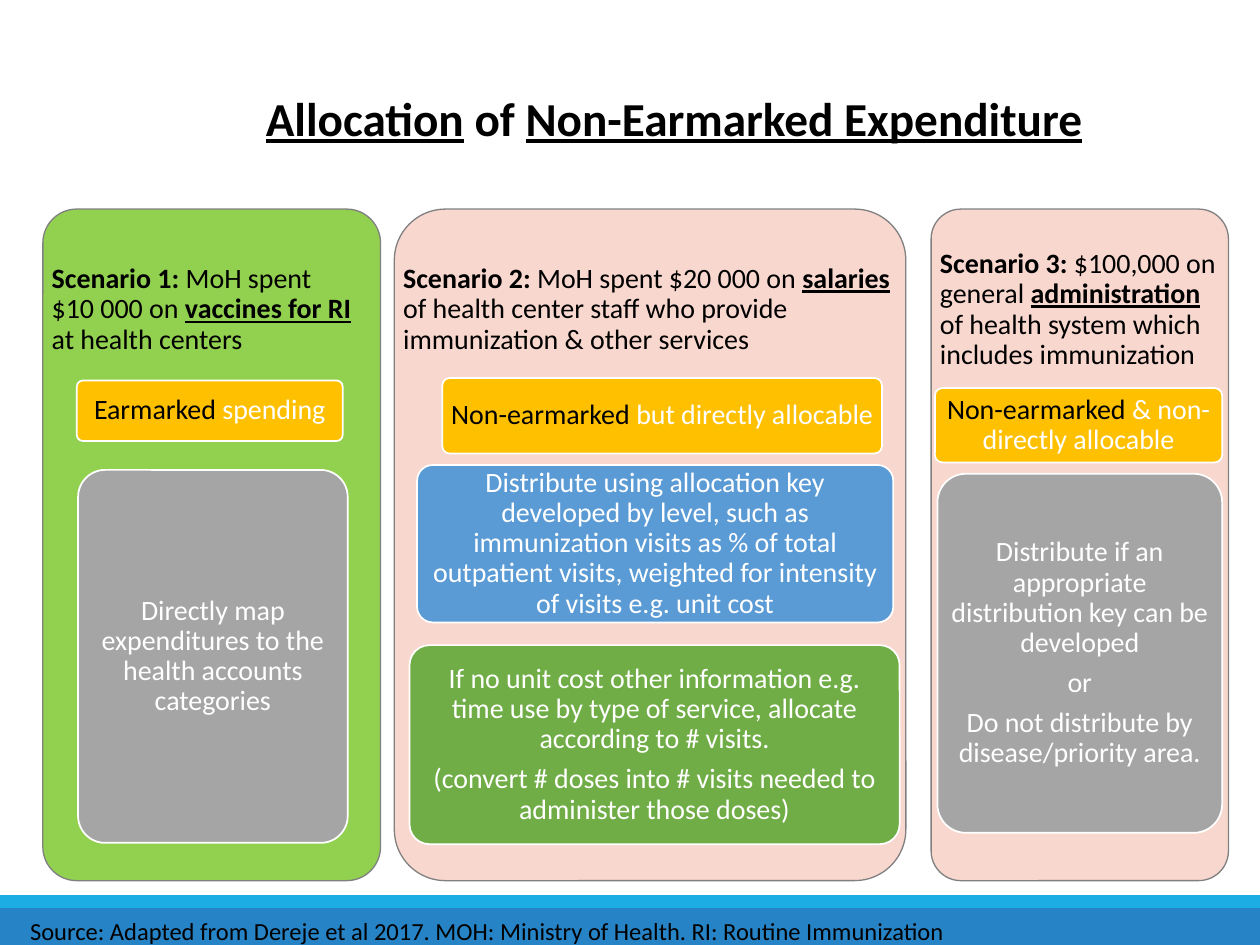
"""Build the slide on allocating non-earmarked expenditure."""
from pptx import Presentation
from pptx.dml.color import RGBColor
from pptx.enum.shapes import MSO_SHAPE
from pptx.enum.text import MSO_ANCHOR, MSO_AUTO_SIZE, PP_ALIGN
from pptx.util import Inches, Pt

RECTANGLE = MSO_SHAPE.RECTANGLE
ROUNDED = MSO_SHAPE.ROUNDED_RECTANGLE
MIDDLE = MSO_ANCHOR.MIDDLE
NO_AUTOFIT = MSO_AUTO_SIZE.NONE
LEFT, CENTER = PP_ALIGN.LEFT, PP_ALIGN.CENTER

BLACK = RGBColor(0x00, 0x00, 0x00)
WHITE = RGBColor(0xFF, 0xFF, 0xFF)
OUTLINE_GRAY = RGBColor(0x80, 0x80, 0x80)
LIME = RGBColor(0x92, 0xD0, 0x50)
PINK = RGBColor(0xF8, 0xD7, 0xCE)
AMBER = RGBColor(0xFF, 0xC0, 0x00)
GRAY = RGBColor(0xA5, 0xA5, 0xA5)
BLUE = RGBColor(0x5B, 0x9B, 0xD5)
GREEN = RGBColor(0x70, 0xAD, 0x47)
FOOTER_BLUE = RGBColor(0x26, 0x83, 0xC6)
FOOTER_CYAN = RGBColor(0x1C, 0xAD, 0xE4)

FONT = "Calibri"
PANEL_TOP, PANEL_HEIGHT, HEADING_HEIGHT = 1.66, 5.33, 1.6

# Each heading alternates bold label, plain text, bold underlined key term, plain text.
SCENARIOS = [
    {
        "left": 0.34, "width": 2.68, "fill": LIME,
        "heading": ("Scenario 1: ", "MoH spent\n$10 000 on ", "vaccines for RI",
                    " at health centers"),
        "cards": [
            ((0.61, 3.02, 2.11, 0.48), AMBER, [("Earmarked", " spending")]),
            ((0.62, 3.73, 2.14, 2.96), GRAY,
             [("", "Directly map expenditures to the health accounts categories")]),
        ],
    },
    {
        "left": 3.13, "width": 4.06, "fill": PINK,
        "heading": ("Scenario 2: ", "MoH spent $20 000 on ", "salaries",
                    " of health center staff who provide immunization & other services"),
        "cards": [
            ((3.51, 3.0, 3.49, 0.6), AMBER, [("Non-earmarked ", "but directly allocable")]),
            ((3.31, 3.69, 3.78, 1.25), BLUE,
             [("", "Distribute using allocation key developed by level, such as "
                   "immunization visits as % of total outpatient visits, weighted "
                   "for intensity of visits e.g. unit cost")]),
            ((3.25, 5.12, 3.89, 1.58), GREEN,
             [("", "If no unit cost other information e.g. time use by type of "
                   "service, allocate according to # visits."),
              ("", "(convert # doses into # visits needed to administer those doses)")]),
        ],
    },
    {
        "left": 7.39, "width": 2.36, "fill": PINK,
        "heading": ("Scenario 3: ", "$100,000 on general ", "administration",
                    " of health system which includes immunization"),
        "cards": [
            ((7.42, 3.08, 2.28, 0.59), AMBER, [("Non-earmarked ", "& non-directly allocable")]),
            ((7.44, 3.76, 2.26, 2.85), GRAY,
             [("", "Distribute if an appropriate distribution key can be developed"),
              ("", "or"),
              ("", "Do not distribute by disease/priority area.")]),
        ],
    },
]


def inches(box):
    """Convert a left, top, width, height tuple to lengths."""
    return [Inches(value) for value in box]


def add_block(slide, kind, box, fill, line, line_width):
    """Add a filled, outlined shape without shadow."""
    block = slide.shapes.add_shape(kind, *inches(box))
    block.shadow.inherit = False
    block.fill.solid()
    block.fill.fore_color.rgb = fill
    block.line.color.rgb = line
    block.line.width = Pt(line_width)
    if kind == ROUNDED:
        block.adjustments[0] = 0.1
    return block


def set_frame(frame, horizontal, vertical):
    """Wrap and vertically centre a text frame with the given insets."""
    frame.word_wrap = True
    frame.vertical_anchor = MIDDLE
    frame.margin_left = frame.margin_right = Inches(horizontal)
    frame.margin_top = frame.margin_bottom = Inches(vertical)


def format_paragraph(paragraph, size, color, alignment):
    """Set the shared font and line spacing of a paragraph."""
    paragraph.alignment = alignment
    paragraph.line_spacing = 0.9
    paragraph.font.name = FONT
    paragraph.font.size = Pt(size)
    paragraph.font.color.rgb = color


def add_run(paragraph, text, bold=None, underline=None, color=None):
    """Append text with its own emphasis, honouring line breaks."""
    for index, part in enumerate(text.split("\n")):
        if index:
            paragraph.add_line_break()
        run = paragraph.add_run()
        run.text = part
        run.font.bold = bold
        run.font.underline = underline
        if color is not None:
            run.font.color.rgb = color


def add_title(slide):
    """Fill and place the title placeholder."""
    title = slide.shapes.title
    title.left, title.top, title.width, title.height = inches((1.62, 0.49, 7.46, 0.94))
    title.text_frame.auto_size = NO_AUTOFIT
    title.text_frame.vertical_anchor = MIDDLE
    paragraph = title.text_frame.paragraphs[0]
    format_paragraph(paragraph, 27, BLACK, CENTER)
    paragraph.font.bold = True
    add_run(paragraph, "Allocation", True, True)
    add_run(paragraph, " of ", True, False)
    add_run(paragraph, "Non-Earmarked Expenditure", True, True)


def add_heading(slide, left, width, heading):
    """Add the scenario description at the top of its panel."""
    box = slide.shapes.add_textbox(*inches((left, PANEL_TOP, width, HEADING_HEIGHT)))
    set_frame(box.text_frame, 0.07, 0.07)
    paragraph = box.text_frame.paragraphs[0]
    format_paragraph(paragraph, 16, BLACK, LEFT)
    label, opening, key_term, ending = heading
    add_run(paragraph, label, bold=True)
    add_run(paragraph, opening)
    add_run(paragraph, key_term, bold=True, underline=True)
    add_run(paragraph, ending)


def add_card(slide, box, fill, lines):
    """Add a rounded card whose lines pair a black lead with white text."""
    frame = add_block(slide, ROUNDED, box, fill, WHITE, 1).text_frame
    set_frame(frame, 0.04, 0.03)
    for index, (lead, text) in enumerate(lines):
        paragraph = frame.add_paragraph() if index else frame.paragraphs[0]
        format_paragraph(paragraph, 16, WHITE, CENTER)
        paragraph.space_after = Pt(5.6)
        if lead:
            add_run(paragraph, lead, color=BLACK)
        add_run(paragraph, text)


def add_scenario(slide, scenario):
    """Add one scenario panel with its heading and cards."""
    left, width = scenario["left"], scenario["width"]
    panel = (left, PANEL_TOP, width, PANEL_HEIGHT)
    add_block(slide, ROUNDED, panel, scenario["fill"], OUTLINE_GRAY, 0.75)
    add_heading(slide, left, width, scenario["heading"])
    for box, fill, lines in scenario["cards"]:
        add_card(slide, box, fill, lines)


def add_source(slide):
    """Add the source line over the footer band."""
    source = slide.shapes.add_textbox(*inches((0.14, 7.22, 8.19, 0.34)))
    source.text_frame.word_wrap = True
    paragraph = source.text_frame.paragraphs[0]
    format_paragraph(paragraph, 14, BLACK, LEFT)
    paragraph.line_spacing = 1.0
    add_run(paragraph, "Source: Adapted from Dereje et al 2017. MOH: Ministry of Health. "
                       "RI: Routine Immunization")


def main():
    """Build and save the slide."""
    deck = Presentation()
    deck.slide_width, deck.slide_height = Inches(10), Inches(7.5)
    slide = deck.slides.add_slide(deck.slide_layouts[5])
    add_block(slide, RECTANGLE, (0, 7.19, 10, 0.31), FOOTER_BLUE, FOOTER_BLUE, 1)
    add_block(slide, RECTANGLE, (0, 7.11, 10, 0.09), FOOTER_CYAN, FOOTER_CYAN, 1)
    add_title(slide)
    for scenario in SCENARIOS:
        add_scenario(slide, scenario)
    add_source(slide)
    deck.save("out.pptx")


if __name__ == "__main__":
    main()
